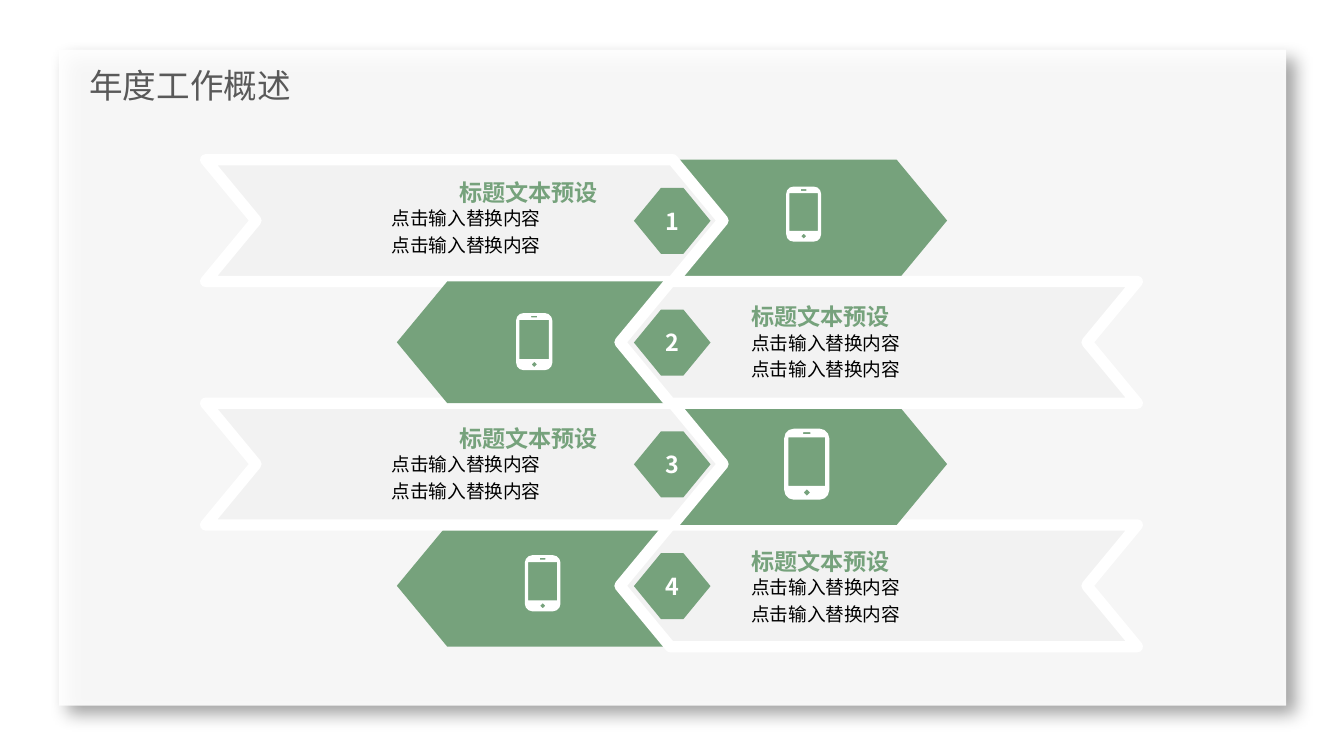
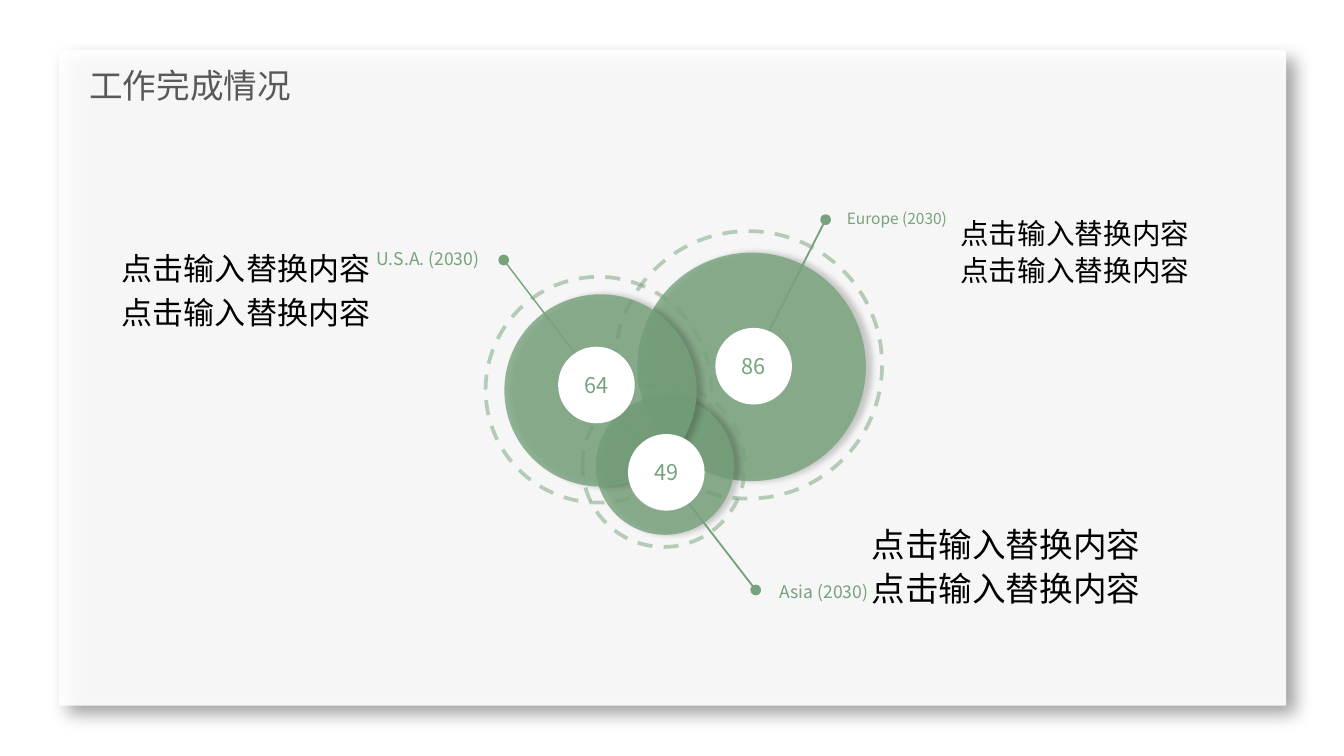
from collections import namedtuple
from math import cos, pi, sin

from lxml import etree
from pptx import Presentation
from pptx.dml.color import RGBColor
from pptx.enum.dml import MSO_LINE
from pptx.enum.shapes import MSO_CONNECTOR, MSO_SHAPE
from pptx.enum.text import MSO_ANCHOR, PP_ALIGN
from pptx.oxml.ns import qn
from pptx.util import Inches, Pt

RECT, CHEVRON = MSO_SHAPE.RECTANGLE, MSO_SHAPE.CHEVRON
HEXAGON, OVAL = MSO_SHAPE.HEXAGON, MSO_SHAPE.OVAL
STRAIGHT, DASH = MSO_CONNECTOR.STRAIGHT, MSO_LINE.DASH
LEFT, CENTER, RIGHT = PP_ALIGN.LEFT, PP_ALIGN.CENTER, PP_ALIGN.RIGHT
TOP, MIDDLE = MSO_ANCHOR.TOP, MSO_ANCHOR.MIDDLE

COLORS = {"green": "76A27C", "band": "F2F2F2", "white": "FFFFFF",
          "black": "000000", "title": "595959"}
FONT = "Noto Sans CJK SC"
PROMPT = ["点击输入替换内容"] * 2

# The grid has 100 columns; rows are as tall as columns are wide
WIDTH, HEIGHT = Inches(10), Inches(5.625)
CELL = WIDTH / 100

Box = namedtuple("Box", "left top width height")
Step = namedtuple("Step", "number text_top phone_left phone_top phone_width")
Region = namedtuple("Region", "name value disc ring pin hub badge line "
                              "label label_size label_align")

PANEL = Box(4.4, 3.7, 91.3, 48.8)
TITLE = Box(6.65, 4.25, 23.3, 4.2)
STEPS_AREA = Box(15.3, 11.88, 69.3, 36.24)
BUBBLES_AREA = Box(26.03, 15, 46, 31)

# Listed from back to front; phone positions are relative to the row
STEPS = [
    Step(1, 1.4, 43.2, 2.0, 2.6),
    Step(4, 1.65, 23.75, 2.25, 2.65),
    Step(3, 1.6, 43.05, 1.9, 3.35),
    Step(2, 1.6, 23.1, 2.35, 2.7),
]

# Circles are left, top, diameter; pins and hubs are points in the area
REGIONS = [
    Region("Europe (2030)", 86, (21.4, 3.8, 17), (19.7, 2.2, 19.9),
           (35.4, 1.35), (30.6, 10.8), (27.2, 9.4, 5.7), 1,
           (36, 0.1), 8.3, LEFT),
    Region("Asia (2030)", 49, (18.3, 14.5, 10.3), (17.3, 13.6, 12.1),
           (30.2, 28.9), (24.1, 21), (20.7, 17.3, 5.7), 1,
           (31, 27.7), 9.4, LEFT),
    Region("U.S.A. (2030)", 64, (11.5, 6.9, 14.3), (10.1, 5.6, 16.8),
           (11.45, 4.35), (17.6, 12.4), (15.5, 10.8, 5.7), 0.75,
           (0.6, 2.95), 9.4, RIGHT),
]

# Box, text size, line spacing
CAPTIONS = [
    (Box(9.05, 17.9, 19.25, 6.8), 16.65, 1.2),
    (Box(71.45, 15.2, 17.9, 6.8), 15.3, 1.1),
    (Box(64.85, 38.55, 20.8, 6.8), 18, 1.1),
]


def cells(*lengths):
    return [round(length * CELL) for length in lengths]


def within(area, left, top, width, height):
    return Box(area.left + left, area.top + top, width, height)


def rgb(name):
    return RGBColor.from_string(COLORS[name])


def set_alpha(solid_fill, percent):
    etree.SubElement(solid_fill[0], qn("a:alpha"), val=str(percent * 1000))


def add_shadow(shape, alpha, blur, distance, angle):
    effects = shape.element.spPr.find(qn("a:effectLst"))
    shadow = etree.SubElement(
        effects, qn("a:outerShdw"), blurRad=str(Pt(blur)), dist=str(Pt(distance)),
        dir=str(angle * 60000), algn="ctr", rotWithShape="0")
    color = etree.SubElement(shadow, qn("a:srgbClr"), val=COLORS["black"])
    etree.SubElement(color, qn("a:alpha"), val=str(alpha * 1000))


def paint(shape, fill=None, alpha=None, line=None, line_width=1, dash=None,
          line_alpha=None):
    shape.shadow.inherit = False
    properties = shape.element.spPr
    if fill:
        shape.fill.solid()
        shape.fill.fore_color.rgb = rgb(fill)
        if alpha:
            set_alpha(properties.find(qn("a:solidFill")), alpha)
    else:
        shape.fill.background()
    if not line:
        shape.line.fill.background()
        return
    shape.line.color.rgb = rgb(line)
    shape.line.width = Pt(line_width)
    if dash:
        shape.line.dash_style = dash
    outline = properties.find(qn("a:ln"))
    etree.SubElement(outline, qn("a:round"))
    if line_alpha:
        set_alpha(outline.find(qn("a:solidFill")), line_alpha)


def add_preset(shapes, preset, box, adjust=(), flip=False, **look):
    shape = shapes.add_shape(preset, *cells(*box))
    for index, value in enumerate(adjust):
        shape.adjustments[index] = value
    if flip:
        shape.element.spPr.find(qn("a:xfrm")).set("flipH", "1")
    paint(shape, **look)
    return shape


def add_circle(shapes, area, circle, **look):
    left, top, diameter = circle
    return add_preset(shapes, OVAL, within(area, left, top, diameter, diameter), **look)


def write(shape, lines, size, color, bold=False, align=LEFT, anchor=TOP,
          insets=(1, 0.5), wrap=True, spacing=None):
    frame = shape.text_frame
    frame.word_wrap = wrap
    frame.vertical_anchor = anchor
    frame.margin_left = frame.margin_right = cells(insets[0])[0]
    frame.margin_top = frame.margin_bottom = cells(insets[1])[0]
    for index, line in enumerate(lines):
        paragraph = frame.add_paragraph() if index else frame.paragraphs[0]
        paragraph.alignment = align
        if spacing:
            paragraph.line_spacing = spacing
        run = paragraph.add_run()
        run.text = line
        run.font.size = Pt(size)
        run.font.bold = bold
        run.font.color.rgb = rgb(color)
        run.font.name = FONT
        etree.SubElement(run.font._element, qn("a:ea"), typeface=FONT)


def add_text(shapes, box, lines, **style):
    write(shapes.add_textbox(*cells(*box)), lines, **style)


def rounded_outline(left, top, width, height, radius=0, parts=0):
    """Points of a rectangle, each corner rounded by some straight parts."""
    corners = [(left + width - radius, top + height - radius),
               (left + radius, top + height - radius),
               (left + radius, top + radius),
               (left + width - radius, top + radius)]
    return [(x + radius * cos(angle), y + radius * sin(angle))
            for quarter, (x, y) in enumerate(corners)
            for angle in [(quarter + part / max(parts, 1)) * pi / 2
                          for part in range(parts + 1)]]


def add_phone(shapes, left, top, width):
    # Drawn on a 26 x 41 raster: body, then screen, button and speaker holes
    body = rounded_outline(0, 0, 26, 41, 5.5, parts=3)
    holes = [rounded_outline(2.4, 5, 21.2, 28),
             rounded_outline(11.2, 35, 3.8, 3.8, 1.9, parts=1),
             rounded_outline(10.9, 2, 4.2, 1.2)]
    outlines = [body] + [hole[::-1] for hole in holes]
    traced = [[tuple(cells(left + x * width / 26, top + y * width / 26))
               for x, y in outline] for outline in outlines]
    builder = shapes.build_freeform(*traced[0][0])
    for index, points in enumerate(traced):
        if index:
            builder.move_to(*points[0])
        builder.add_line_segments(points[1:], close=True)
    paint(builder.convert_to_shape(), fill="white")


def add_panel(deck, layout):
    """The panel is drawn once, on the layout that all slides share."""
    slide = deck.slides[0]
    panel = add_preset(slide.shapes, RECT, PANEL, fill="white", alpha=91)
    add_shadow(panel, alpha=40, blur=9, distance=7, angle=45)
    layout.shapes.element.append(panel.element)


def add_base(deck, title):
    layout = deck.slide_layouts[6]
    slide = deck.slides.add_slide(layout)
    if len(deck.slides) == 1:
        add_panel(deck, layout)
    add_text(slide.shapes, TITLE, [title], size=18, color="title",
             anchor=MIDDLE, insets=(0, 0.5))
    return slide


def add_step(slide, row, step):
    shapes = slide.shapes.add_group_shape().shapes
    mirrored = step.number % 2 == 0
    arrow_left, band_left = (14.23, 30.83) if mirrored else (34.67, 0)
    text_left, text_width = (39.8, 17.2) if mirrored else (13.05, 16.95)

    # Arrow and band
    add_preset(shapes, CHEVRON, within(row, arrow_left, 0, 20.5, row.height),
               adjust=[0.414], flip=mirrored, fill="green")
    add_preset(shapes, CHEVRON, within(row, band_left, 0, 38.5, row.height),
               adjust=[0.414], flip=mirrored, fill="band", line="white", line_width=6)

    # Number
    number = add_preset(shapes, HEXAGON, within(row, 31.87, 2.1, 5.7, 4.9),
                        adjust=[0.411, 1.155], fill="green")
    write(number, [str(step.number)], size=12.5, color="white", bold=True,
          align=CENTER, anchor=MIDDLE, wrap=False)

    # Text
    add_text(shapes, within(row, text_left, step.text_top + 1.73, text_width, 4.1),
             PROMPT, size=10, color="black", anchor=MIDDLE, insets=(0.8, 0),
             spacing=1.2)
    add_text(shapes, within(row, text_left, step.text_top, text_width, 1.7),
             ["标题文本预设"], size=12.4, color="green", bold=True,
             align=LEFT if mirrored else RIGHT, insets=(0.8, 0), wrap=False)

    add_phone(shapes, row.left + step.phone_left, row.top + step.phone_top,
              step.phone_width)


def build_overview(deck, area):
    slide = add_base(deck, "年度工作概述")
    pitch = area.height / len(STEPS)
    for step in STEPS:
        row = within(area, 0, (step.number - 1) * pitch, area.width, pitch)
        add_step(slide, row, step)


def add_pin(shapes, area, region):
    pin_x, pin_y = region.pin
    hub_x, hub_y = region.hub
    line = shapes.add_connector(STRAIGHT, *cells(
        area.left + pin_x, area.top + pin_y, area.left + hub_x, area.top + hub_y))
    line.line.color.rgb = rgb("green")
    line.line.width = Pt(region.line)
    etree.SubElement(line.element.spPr, qn("a:effectLst"))
    add_circle(shapes, area, (pin_x - 0.4, pin_y - 0.4, 0.8), fill="green")
    add_text(shapes, within(area, *region.label, 10, 2.7), [region.name],
             size=region.label_size, color="green", align=region.label_align)


def add_bubbles(slide, area):
    shapes = slide.shapes.add_group_shape().shapes
    for region in REGIONS:
        disc = add_circle(shapes, area, region.disc, fill="green", alpha=80)
        add_shadow(disc, alpha=23, blur=3, distance=3, angle=0)
        add_circle(shapes, area, region.ring, line="green", line_width=2,
                   dash=DASH, line_alpha=50)
    for region in REGIONS:
        add_pin(shapes, area, region)
    for region in REGIONS:
        badge = add_circle(shapes, area, region.badge, fill="white")
        write(badge, [str(region.value)], size=11.6, color="green",
              align=CENTER, anchor=MIDDLE)


def build_completion(deck, area):
    slide = add_base(deck, "工作完成情况")
    for box, size, spacing in CAPTIONS:
        add_text(slide.shapes, box, PROMPT, size=size, color="black",
                 anchor=MIDDLE, insets=(0, 0), spacing=spacing)
    add_bubbles(slide, area)


def main():
    deck = Presentation()
    deck.slide_width, deck.slide_height = WIDTH, HEIGHT
    build_overview(deck, STEPS_AREA)
    build_completion(deck, BUBBLES_AREA)
    deck.save("out.pptx")


if __name__ == "__main__":
    main()
